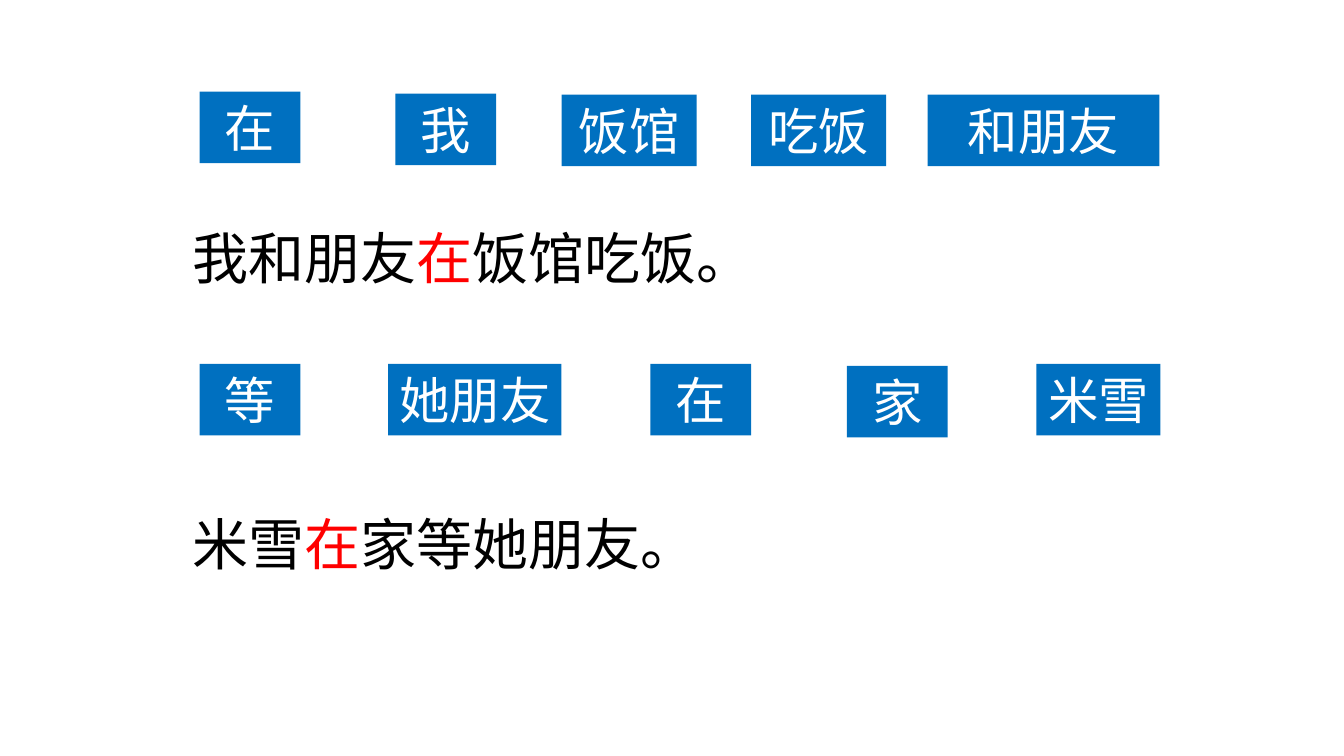
from dataclasses import dataclass
from lxml import etree
from pptx import Presentation
from pptx.dml.color import RGBColor
from pptx.enum.shapes import MSO_SHAPE
from pptx.enum.text import MSO_ANCHOR, PP_ALIGN
from pptx.oxml.ns import qn
from pptx.shapes.autoshape import Shape
from pptx.slide import Slide
from pptx.util import Inches, Pt

RECT = MSO_SHAPE.RECTANGLE
MID, TOP = MSO_ANCHOR.MIDDLE, MSO_ANCHOR.TOP
LEFT, CENTER = PP_ALIGN.LEFT, PP_ALIGN.CENTER
WIDE, HIGH = Inches(13.33), Inches(7.5)


@dataclass(frozen=True)
class Theme:
    """Colours, font and type sizes of the slide."""
    font: str = "Noto Sans CJK SC"
    tile: str = "0070C0"
    light: str = "FFFFFF"
    dark: str = "000000"
    key: str = "FF0000"
    word: int = 36
    text: int = 40


@dataclass(frozen=True)
class Box:
    """Place and size in percent of the slide."""
    x: float
    y: float
    w: float
    h: float = 9.47

    def emu(self) -> tuple[int, ...]:
        """Give left, top, width and height in slide units."""
        pairs = ((self.x, WIDE), (self.y, HIGH), (self.w, WIDE), (self.h, HIGH))
        return tuple(round(share * full / 100) for share, full in pairs)


@dataclass(frozen=True)
class Tile:
    """A word on a filled rectangle."""
    text: str
    box: Box


@dataclass(frozen=True)
class Line:
    """A sentence cut around its key word."""
    words: tuple[str, str, str]
    box: Box
    wrap: bool
    space: float


THEME = Theme()
TILES = (
    Tile("在", Box(14.85, 12.13, 7.5)),
    Tile("我", Box(29.41, 12.4, 7.5)),
    Tile("饭馆", Box(41.79, 12.53, 10.05)),
    Tile("吃饭", Box(55.89, 12.53, 10.05)),
    Tile("和朋友", Box(69.02, 12.53, 17.25)),
    Tile("等", Box(14.85, 48.13, 7.5)),
    Tile("她朋友", Box(28.88, 48.13, 12.9)),
    Tile("在", Box(48.39, 48.13, 7.5)),
    Tile("家", Box(63.02, 48.4, 7.5)),
    Tile("米雪", Box(77.12, 48.13, 9.23)),
)
LINES = (
    Line(("我和朋友", "在", "饭馆吃饭。"), Box(13.58, 28.93, 43.59, 10.27), False, 1),
    Line(("米雪", "在", "家等她朋友。"), Box(13.58, 67.73, 82.52), True, 0.9),
)


def write(shape: Shape, runs: list[tuple[str, str]], *, size: int,
          align: PP_ALIGN = LEFT, anchor: MSO_ANCHOR = TOP,
          wrap: bool = True, space: float = 1) -> None:
    """Fill a shape with one paragraph of coloured runs."""
    frame = shape.text_frame
    frame.word_wrap, frame.vertical_anchor = wrap, anchor
    para = frame.paragraphs[0]
    para.alignment, para.line_spacing = align, float(space)
    for text, color in runs:
        run = para.add_run()
        run.text = text
        run.font.size, run.font.name = Pt(size), THEME.font
        run.font.color.rgb = RGBColor.from_string(color)
        etree.SubElement(run.font._element, qn("a:ea"), typeface=THEME.font)


def draw_tile(slide: Slide, tile: Tile) -> None:
    """Draw one word tile."""
    shape = slide.shapes.add_shape(RECT, *tile.box.emu())
    shape.shadow.inherit = False
    shape.fill.solid()
    shape.fill.fore_color.rgb = RGBColor.from_string(THEME.tile)
    shape.line.fill.background()
    write(shape, [(tile.text, THEME.light)], size=THEME.word,
          align=CENTER, anchor=MID)


def draw_line(slide: Slide, line: Line) -> None:
    """Draw one sentence with its key word marked."""
    shape = slide.shapes.add_textbox(*line.box.emu())
    hues = (THEME.dark, THEME.key, THEME.dark)
    write(shape, list(zip(line.words, hues)), size=THEME.text,
          wrap=line.wrap, space=line.space)


def main() -> None:
    """Build and save the slide."""
    deck = Presentation()
    deck.slide_width, deck.slide_height = WIDE, HIGH
    slide = deck.slides.add_slide(deck.slide_layouts[6])
    for tile in TILES:
        draw_tile(slide, tile)
    for line in LINES:
        draw_line(slide, line)
    deck.save("out.pptx")


if __name__ == "__main__":
    main()
